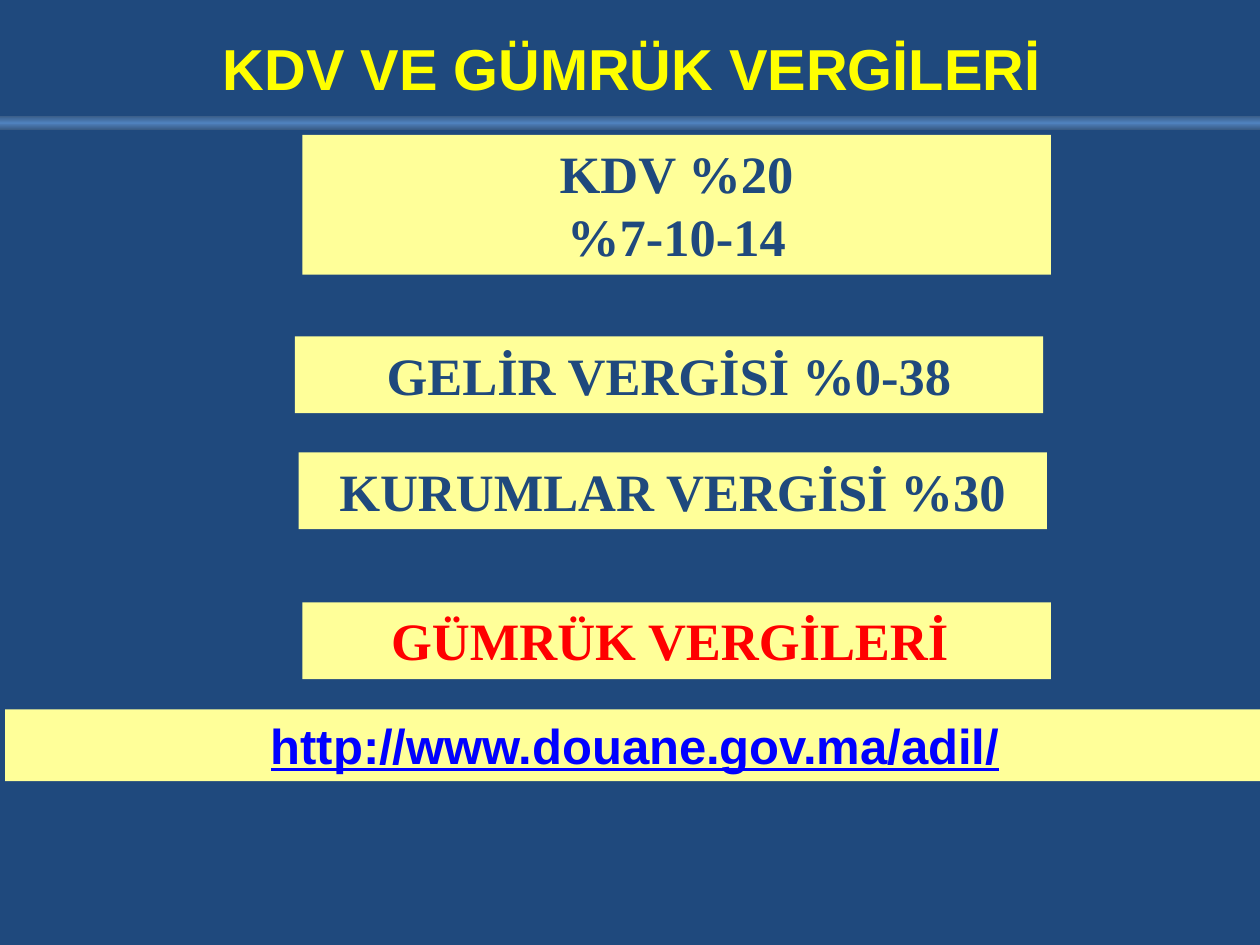
import lxml.etree
import pptx
import pptx.dml.color
import pptx.enum.shapes
import pptx.enum.text
import pptx.oxml.ns
import pptx.util
from dataclasses import dataclass
from pptx.util import Inches


@dataclass(frozen=True)
class Theme:
    navy: str = "1F497D"
    yellow: str = "FFFF00"
    cream: str = "FFFF99"
    red: str = "FF0000"
    link_blue: str = "0000FF"
    band_edge: str = "395C87"
    band_middle: str = "4F81BD"
    sans: str = "Arial"
    serif: str = "Times New Roman"
    title_size: int = 33
    tax_size: int = 30
    address_size: int = 28


theme = Theme()


def rgb(code):
    return pptx.dml.color.RGBColor.from_string(code)


def write_lines(box, lines, font_name, size, color, underline=None):
    """Fill a box with centred bold lines, one paragraph each."""
    frame = box.text_frame
    frame.word_wrap = True
    for index, line in enumerate(lines):
        para = frame.paragraphs[0] if index == 0 else frame.add_paragraph()
        para.alignment = pptx.enum.text.PP_ALIGN.CENTER
        span = para.add_run()
        span.text = line
        span.font.name = font_name
        span.font.size = pptx.util.Pt(size)
        span.font.bold = True
        span.font.underline = underline
        span.font.color.rgb = rgb(color)


deck = pptx.Presentation()
deck.slide_width, deck.slide_height = Inches(10), Inches(7.5)
page = deck.slides.add_slide(deck.slide_layouts[6])
page.background.fill.solid()
page.background.fill.fore_color.rgb = rgb(theme.navy)
rectangle = pptx.enum.shapes.MSO_SHAPE.RECTANGLE

# Title
title = page.shapes.add_textbox(Inches(0.83), Inches(0), Inches(8.5), Inches(1.07))
title.text_frame.vertical_anchor = pptx.enum.text.MSO_ANCHOR.MIDDLE
write_lines(title, ["KDV VE GÜMRÜK VERGİLERİ "], theme.sans, theme.title_size, theme.yellow)

# Band under the title, lighter in the middle
band = page.shapes.add_shape(rectangle, Inches(0), Inches(0.92), Inches(10), Inches(0.11))
band.shadow.inherit = False
band.line.fill.background()
band.fill.gradient()
band.fill.gradient_angle = 270
stop_list = band._element.spPr.find(".//" + pptx.oxml.ns.qn("a:gsLst"))
for stop in list(stop_list):
    stop_list.remove(stop)
for percent, code in [(0, theme.band_edge), (50, theme.band_middle), (100, theme.band_edge)]:
    stop = lxml.etree.SubElement(stop_list, pptx.oxml.ns.qn("a:gs"), pos=str(percent * 1000))
    lxml.etree.SubElement(stop, pptx.oxml.ns.qn("a:srgbClr"), val=code)

# Tax boxes and the address bar: left, top, width, height, lines, font, size, colour, underline
tax_style = (theme.serif, theme.tax_size, theme.navy, None)
customs_style = (theme.serif, theme.tax_size, theme.red, None)
address_style = (theme.sans, theme.address_size, theme.link_blue, True)
panels = [
    (2.4, 1.07, 5.94, 1.11, ["KDV %20", "%7-10-14"], tax_style),
    (2.34, 2.67, 5.94, 0.61, ["GELİR VERGİSİ %0-38"], tax_style),
    (2.37, 3.59, 5.94, 0.61, ["KURUMLAR VERGİSİ %30"], tax_style),
    (2.4, 4.78, 5.94, 0.61, ["GÜMRÜK VERGİLERİ "], customs_style),
    (0.04, 5.63, 10, 0.57, ["http://www.douane.gov.ma/adil/"], address_style),
]
for left, top, width, height, lines, style in panels:
    panel = page.shapes.add_shape(rectangle, Inches(left), Inches(top), Inches(width), Inches(height))
    panel.shadow.inherit = False
    panel.fill.solid()
    panel.fill.fore_color.rgb = rgb(theme.cream)
    panel.line.fill.background()
    panel.text_frame.vertical_anchor = pptx.enum.text.MSO_ANCHOR.TOP
    panel.text_frame.auto_size = pptx.enum.text.MSO_AUTO_SIZE.SHAPE_TO_FIT_TEXT
    write_lines(panel, lines, *style)

deck.save("out.pptx")
